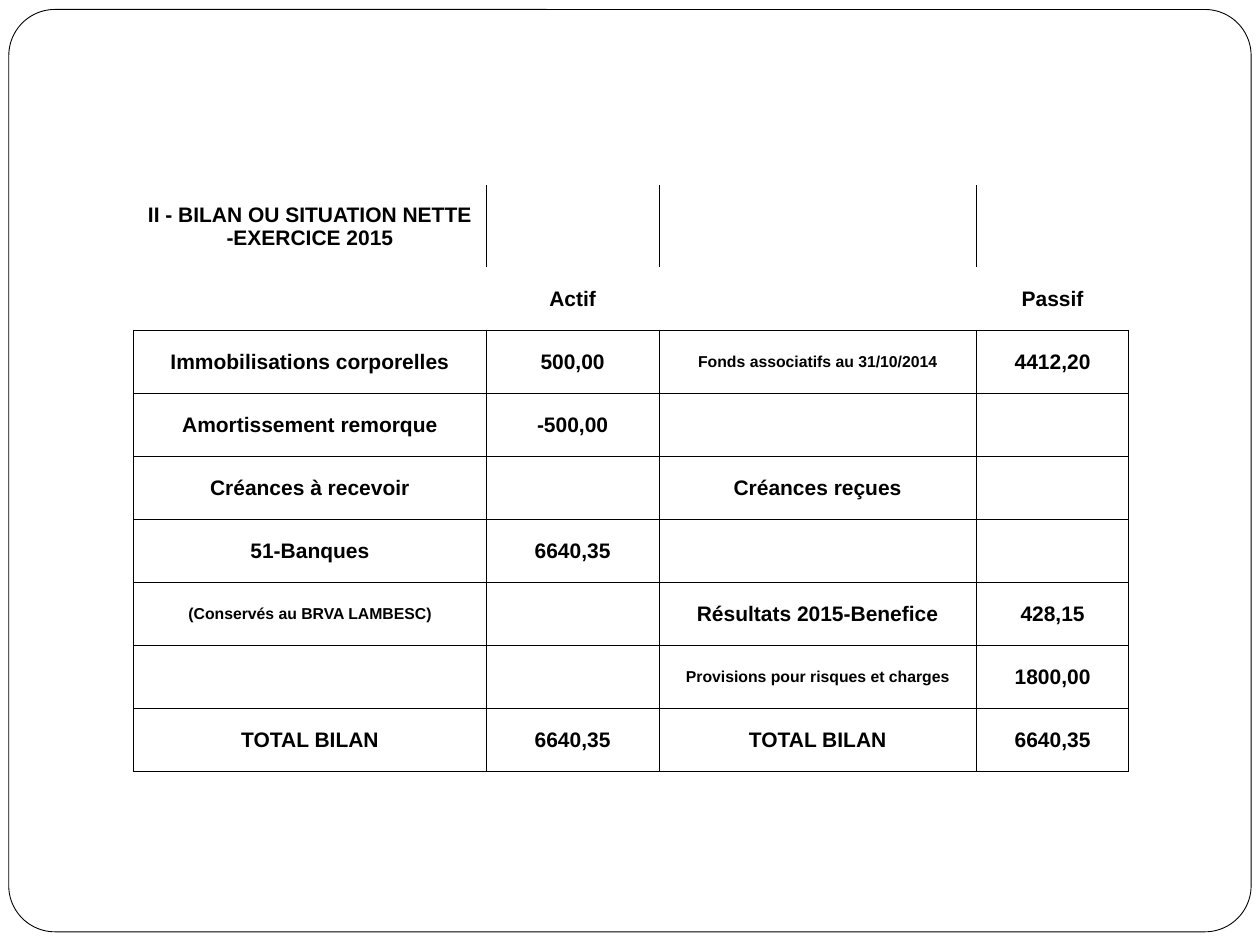
from pptx import Presentation
from pptx.dml.color import RGBColor
from pptx.enum.shapes import MSO_SHAPE
from pptx.enum.text import MSO_ANCHOR, PP_ALIGN
from pptx.oxml.ns import qn
from pptx.util import Inches, Pt
from lxml import etree

ROUND = MSO_SHAPE.ROUNDED_RECTANGLE
MID, CENTER = MSO_ANCHOR.MIDDLE, PP_ALIGN.CENTER
COLORS = {"ink": "000000", "paper": "FFFFFF"}
WIDE, HIGH = 10, 7.5
BLANK = 6

COLS = [2.8, 1.37, 2.52, 1.21]
ROWS = [0.65] + [0.5] * 8
HEAD = 2  # rows above the ruled grid
SMALL = {(2, 2), (6, 0), (7, 2)}
DATA = [
    ["II - BILAN OU SITUATION NETTE -EXERCICE 2015", "", "", ""],
    ["", "Actif", "", "Passif"],
    ["Immobilisations corporelles", "500,00", "Fonds associatifs au 31/10/2014", "4412,20"],
    ["Amortissement remorque", "-500,00", "", ""],
    ["Créances à recevoir", "", "Créances reçues", ""],
    ["51-Banques", "6640,35", "", ""],
    ["(Conservés au BRVA LAMBESC)", "", "Résultats 2015-Benefice", "428,15"],
    ["", "", "Provisions pour risques et charges", "1800,00"],
    ["TOTAL BILAN", "6640,35", "TOTAL BILAN", "6640,35"],
]


def sides(row, col):
    """Sides of a cell that carry a rule."""
    if row == 0:
        return ("L" if col else "") + ("R" if col < len(COLS) - 1 else "")
    return "B" if row < HEAD else "LRTB"


class Page:
    font, size, small, rule = "Arial", 12, 9, 0.5

    def __init__(self, deck):
        self.slide = deck.slides.add_slide(deck.slide_layouts[BLANK])

    def tint(self, name):
        return RGBColor.from_string(COLORS[name])

    def place(self, x, y, w, h):
        """Turn shares of the slide into lengths."""
        return (Inches(x * WIDE), Inches(y * HIGH),
                Inches(w * WIDE), Inches(h * HIGH))

    def frame(self, x, y, w, h, bend):
        box = self.slide.shapes.add_shape(ROUND, *self.place(x, y, w, h))
        box.adjustments[0] = bend
        box.shadow.inherit = False
        box.fill.solid()
        box.fill.fore_color.rgb = self.tint("paper")
        box.line.color.rgb = self.tint("ink")
        box.line.width = Pt(self.rule)

    def edge(self, cell, marked):
        props = cell._tc.get_or_add_tcPr()
        for spot, side in enumerate("LRTB"):
            line = etree.Element(qn("a:ln" + side), w=str(Pt(self.rule)))
            if side in marked:
                fill = etree.SubElement(line, qn("a:solidFill"))
                etree.SubElement(fill, qn("a:srgbClr"), val=COLORS["ink"])
            else:
                etree.SubElement(line, qn("a:noFill"))
            props.insert(spot, line)

    def label(self, cell, text, size):
        cell.vertical_anchor = MID
        cell.margin_left = cell.margin_right = cell.margin_top = Inches(0.01)
        cell.margin_bottom = 0
        para = cell.text_frame.paragraphs[0]
        para.alignment = CENTER
        if text:
            run = para.add_run()
            run.text = text
            run.font.name, run.font.size = self.font, Pt(size)
            run.font.bold = True
            run.font.color.rgb = self.tint("ink")

    def table(self, x, y, data):
        area = self.place(x, y, sum(COLS) / WIDE, sum(ROWS) / HIGH)
        grid = self.slide.shapes.add_table(len(ROWS), len(COLS), *area).table
        grid.first_row = grid.horz_banding = False
        for col, wide in zip(grid.columns, COLS):
            col.width = Inches(wide)
        for row, high in zip(grid.rows, ROWS):
            row.height = Inches(high)
        for r, line in enumerate(data):
            for c, text in enumerate(line):
                cell = grid.cell(r, c)
                cell.fill.background()
                self.edge(cell, sides(r, c))
                self.label(cell, text, self.small if (r, c) in SMALL else self.size)


def main():
    deck = Presentation()
    deck.slide_width, deck.slide_height = Inches(WIDE), Inches(HIGH)
    page = Page(deck)
    # Rounded page border
    page.frame(0.007, 0.01, 0.986, 0.976, 0.05)
    # Balance sheet
    page.table(0.106, 0.196, DATA)
    deck.save("out.pptx")


if __name__ == "__main__":
    main()
